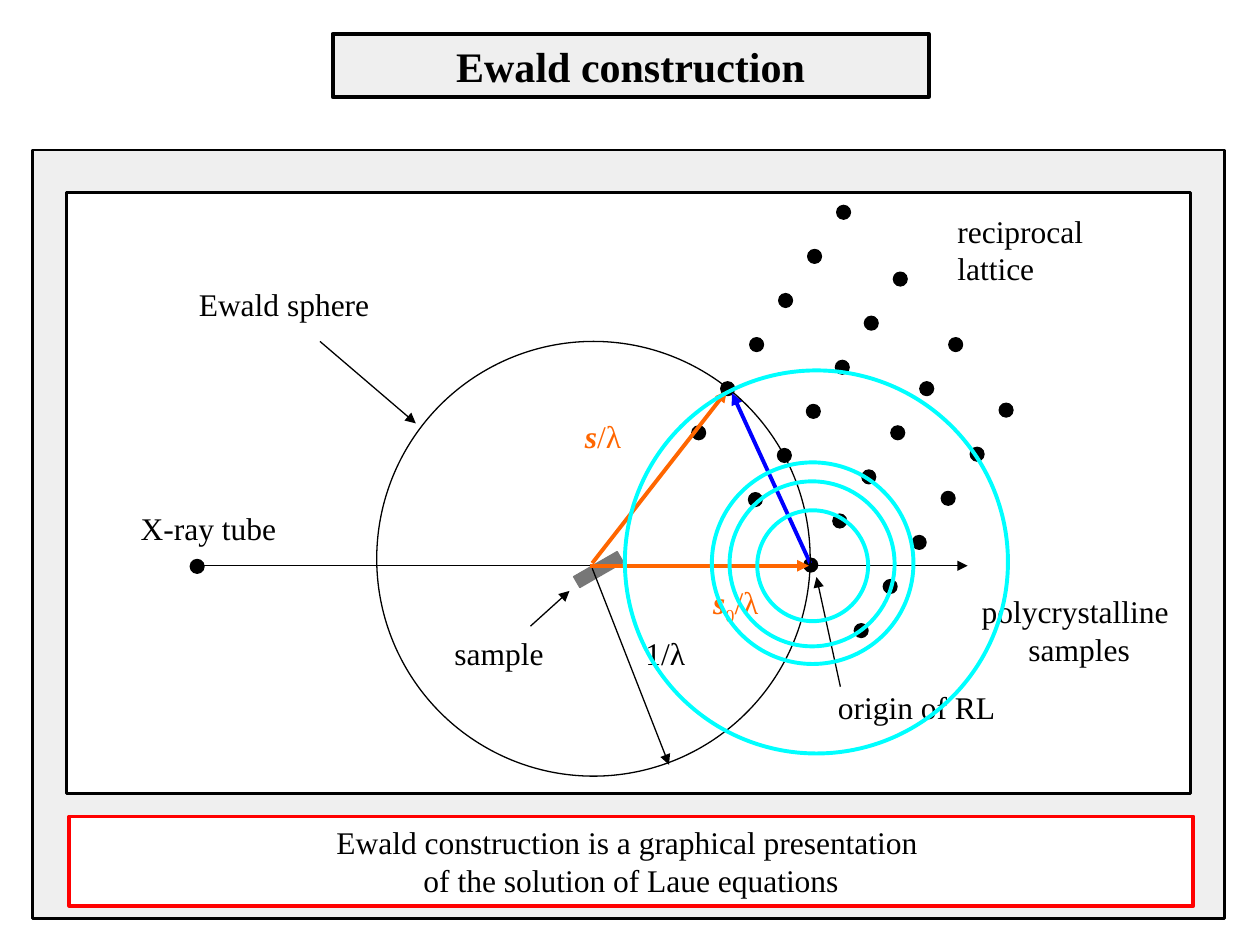
from pptx import Presentation
from pptx.dml.color import RGBColor
from pptx.enum.shapes import MSO_CONNECTOR as Connector, MSO_SHAPE as Shape
from pptx.enum.text import MSO_ANCHOR as Anchor, MSO_AUTO_SIZE as AutoSize, PP_ALIGN as Align
from pptx.oxml.ns import qn
from pptx.util import Inches, Pt
from lxml.etree import SubElement

COLORS = {
    "black": "000000", "white": "FFFFFF", "panel": "EFEFEF", "gray": "777777",
    "orange": "FF6600", "blue": "0000FF", "red": "FF0000", "cyan": "00FFFF",
}
LEFT, CENTER = Align.LEFT, Align.CENTER


def add_figure(parent, kind, box, fill=None, line="black", width=0.75):
    """Add a preset shape; a colour of None means no fill or no line."""
    shape = parent.add_shape(kind, *map(Inches, box))
    shape.shadow.inherit = False
    for paint, color in ((shape.fill, fill), (shape.line.fill, line)):
        if color:
            paint.solid()
            paint.fore_color.rgb = RGBColor.from_string(COLORS[color])
        else:
            paint.background()
    if line:
        shape.line.width = Pt(width)
    return shape


def write_text(shape, lines, color="black", size=18, bold=False, align=CENTER, wrap=False):
    """Write lines of (text, run format) pairs into a shape."""
    frame = shape.text_frame
    settings = {"word_wrap": wrap, "auto_size": AutoSize.NONE,
                "vertical_anchor": Anchor.MIDDLE if wrap else Anchor.TOP}
    for name, value in settings.items():
        setattr(frame, name, value)
    for index, runs in enumerate(lines):
        paragraph = frame.paragraphs[0] if index == 0 else frame.add_paragraph()
        paragraph.alignment = align
        for text, changes in runs:
            run = paragraph.add_run()
            run.text = text
            run.font.color.rgb = RGBColor.from_string(COLORS[color])
            values = {"name": "Times New Roman", "size": Pt(size), "bold": bold, **changes}
            for name, value in values.items():
                setattr(run.font, name, value)


presentation = Presentation()
presentation.slide_width, presentation.slide_height = Inches(10), Inches(7.5)
slide = presentation.slides.add_slide(presentation.slide_layouts[5])
shapes = slide.shapes

# Title
title = shapes.title
title_box = {"left": 2.64, "top": 0.27, "width": 4.73, "height": 0.5}
for name, value in title_box.items():
    setattr(title, name, Inches(value))
title.fill.solid()
title.fill.fore_color.rgb = RGBColor.from_string(COLORS["panel"])
title.line.color.rgb = RGBColor.from_string(COLORS["black"])
title.line.width = Pt(2.25)
write_text(title, [[("Ewald construction", {})]], size=24, bold=True, wrap=True)

# Panels and sample
add_figure(shapes, Shape.RECTANGLE, (0.26, 1.19, 9.46, 6.1), "panel", width=1.5)
add_figure(shapes, Shape.RECTANGLE, (0.53, 1.53, 8.92, 4.77), "white", width=1.5)
sample = add_figure(shapes, Shape.RECTANGLE, (4.55, 4.47, 0.4, 0.1), "gray", "gray")
sample.rotation = 330

# Reciprocal lattice: four rows of six points
DOT = 0.11
lattice = shapes.add_group_shape().shapes
for left, top in ((6.78, 4.95), (6.38, 4.43), (5.94, 3.91), (5.49, 3.38)):
    for step in range(6):
        box = (left + 0.23 * step, top - 0.35 * step, DOT, DOT)
        add_figure(lattice, Shape.OVAL, box, "black")

# Labels: box, fill, colour, alignment, lines
bold_italic = {"bold": True, "italic": True}
labels = [
    ((5.02, 4.98, 0.52, 0.4), None, "black", CENTER, [[("1/λ", {})]]),
    ((1.01, 3.99, 1.29, 0.4), "white", "black", CENTER, [[("X-ray tube", {})]]),
    ((3.5, 4.98, 0.92, 0.4), "white", "black", CENTER, [[("sample", {})]]),
    ((1.47, 2.21, 1.57, 0.4), "white", "black", CENTER, [[("Ewald sphere", {})]]),
    ((5.55, 4.58, 0.58, 0.4), None, "orange", CENTER,
     [[("s", bold_italic), ("0", {}), ("/λ", {})]]),
    ((4.54, 3.26, 0.49, 0.4), None, "orange", CENTER, [[("s", bold_italic), ("/λ", {})]]),
    ((6.53, 5.41, 1.49, 0.4), "white", "black", CENTER, [[("origin of RL", {})]]),
    ((7.5, 1.63, 1.21, 0.71), "white", "black", LEFT,
     [[("reciprocal", {})], [("lattice", {})]]),
    ((7.68, 4.65, 1.77, 0.71), None, "black", CENTER,
     [[("polycrystalline ", {})], [("samples", {})]]),
]
for box, fill, color, align, lines in labels:
    label = shapes.add_textbox(*map(Inches, box))
    if fill:
        label.fill.solid()
        label.fill.fore_color.rgb = RGBColor.from_string(COLORS[fill])
    write_text(label, lines, color, align=align)
    for run in label.text_frame.paragraphs[0].runs:
        if run.text == "0":
            run._r.get_or_add_rPr().set("baseline", "-25000")

# Arrows: start, end, colour, width
arrows = [
    ((1.59, 4.49), (7.68, 4.49), "black", 0.75),   # beam
    ((4.68, 4.49), (6.42, 4.49), "orange", 2.25),  # incident vector
    ((4.7, 4.47), (5.77, 3.1), "orange", 2.25),    # diffracted vector
    ((6.43, 4.47), (5.81, 3.12), "blue", 2.25),    # lattice vector
    ((4.7, 4.51), (5.31, 6.07), "black", 0.75),    # radius
    ((4.21, 4.97), (4.52, 4.69), "black", 0.75),   # to sample
    ((2.54, 2.71), (3.3, 3.36), "black", 0.75),    # to sphere
    ((6.67, 5.45), (6.48, 4.58), "black", 0.75),   # to origin
]
for start, end, color, width in arrows:
    arrow = shapes.add_connector(Connector.STRAIGHT, *map(Inches, start + end))
    arrow.line.color.rgb = RGBColor.from_string(COLORS[color])
    arrow.line.width = Pt(width)
    SubElement(arrow.line._get_or_add_ln(), qn("a:tailEnd"), type="triangle")
    SubElement(arrow._element.spPr, qn("a:effectLst"))

# X-ray tube and Ewald sphere
add_figure(shapes, Shape.OVAL, (1.51, 4.44, DOT, DOT), "black")
add_figure(shapes, Shape.OVAL, (2.99, 2.71, 3.44, 3.45))

# Conclusion
conclusion = add_figure(shapes, Shape.RECTANGLE, (0.55, 6.48, 8.92, 0.71), "white", "red", 2.25)
write_text(conclusion, [[("Ewald construction is a graphical presentation ", {})],
                        [("of the solution of Laue equations", {})]], wrap=True)

# Rings of polycrystalline samples
rings = shapes.add_group_shape().shapes
for left, top, size in ((6.01, 4.05, 0.88), (5.79, 3.82, 1.31),
                        (5.65, 3.67, 1.6), (4.96, 2.94, 3.04)):
    add_figure(rings, Shape.OVAL, (left, top, size, size), line="cyan", width=2.25)

presentation.save("out.pptx")
